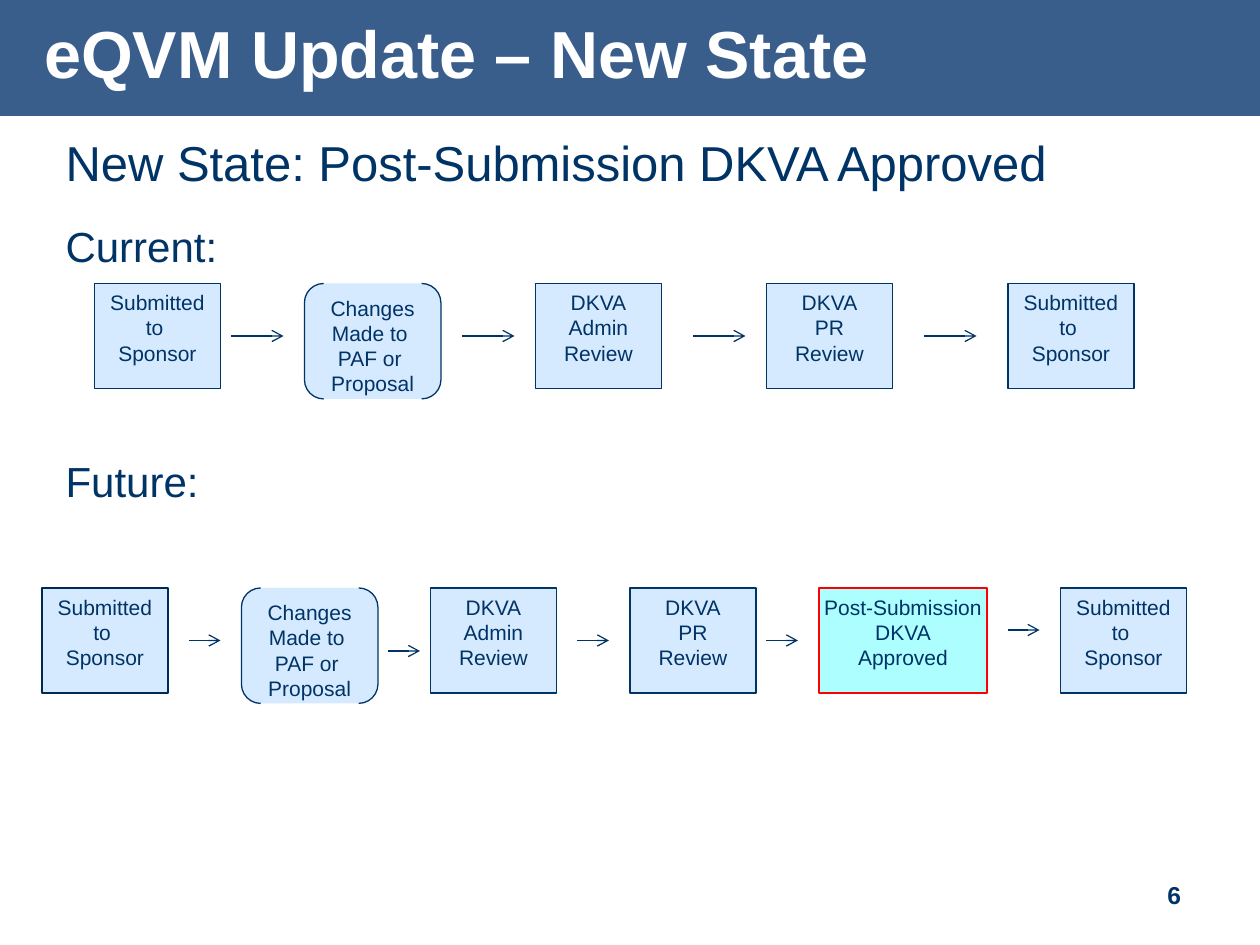
"""Builds the slide comparing the current and future proposal review flows."""
from dataclasses import dataclass

from lxml.etree import SubElement
from pptx import Presentation
from pptx.dml.color import RGBColor
from pptx.enum.shapes import MSO_CONNECTOR, MSO_SHAPE
from pptx.enum.text import MSO_ANCHOR, MSO_AUTO_SIZE, PP_ALIGN
from pptx.oxml.ns import qn
from pptx.util import Inches, Pt

NAVY = RGBColor(0x00, 0x33, 0x66)
DEEP_NAVY = RGBColor(0x00, 0x2A, 0x56)
HEADER_BLUE = RGBColor(0x3A, 0x5E, 0x8C)
PALE_BLUE = RGBColor(0xD5, 0xE9, 0xFF)
CYAN = RGBColor(0xAD, 0xFF, 0xFF)
RED = RGBColor(0xFF, 0x00, 0x00)
WHITE = RGBColor(0xFF, 0xFF, 0xFF)

CELL = Inches(1) // 12
SUBMITTED = "Submitted\nto \nSponsor"
CHANGES = "Changes\nMade to \nPAF or \nProposal"
ADMIN_REVIEW = "DKVA\nAdmin\nReview"
PR_REVIEW = "DKVA\nPR\nReview"
APPROVED = "Post-Submission\nDKVA\nApproved"


@dataclass
class State:
    """A workflow state, placed by grid column and sized in grid cells."""
    text: str
    column: int
    width: int = 12
    height: int = 10
    kind: MSO_SHAPE = MSO_SHAPE.RECTANGLE
    fill: RGBColor = PALE_BLUE
    border: RGBColor = NAVY


@dataclass
class Arrow:
    """A horizontal arrow, placed by grid column and rows below its flow's top."""
    column: int
    drop: int
    length: int


@dataclass
class Flow:
    """A row of states and the arrows between them."""
    row: int
    states: list[State]
    arrows: list[Arrow]


def changes_state(column: int) -> State:
    """Return the bracketed state for changes made to a form."""
    return State(CHANGES, column, 13, 11, MSO_SHAPE.DOUBLE_BRACKET)


FLOWS = [
    Flow(27,
         [State(SUBMITTED, 9), changes_state(29), State(ADMIN_REVIEW, 51),
          State(PR_REVIEW, 73), State(SUBMITTED, 96)],
         [Arrow(column, 5, 5) for column in range(22, 89, 22)]),
    Flow(56,
         [State(SUBMITTED, 4, border=DEEP_NAVY), changes_state(23),
          State(ADMIN_REVIEW, 41), State(PR_REVIEW, 60),
          State(APPROVED, 78, width=16, fill=CYAN, border=RED), State(SUBMITTED, 101)],
         [Arrow(column, drop, 3) for column, drop in
          ((18, 5), (37, 6), (55, 5), (73, 5), (96, 4))]),
]


def set_values(target, values: dict) -> None:
    """Set every attribute named in a dict of format values."""
    for name, value in values.items():
        setattr(target, name, value)


def place(box, left: float, top: float, width: float, height: float) -> None:
    """Move and size a box, in inches."""
    set_values(box, {"left": Inches(left), "top": Inches(top),
                     "width": Inches(width), "height": Inches(height)})


def format_font(para, size: float, color: RGBColor = NAVY, bold: bool = False) -> None:
    """Give all spans of a paragraph the slide's font."""
    for span in para.runs:
        set_values(span.font, {"name": "Arial", "size": Pt(size), "bold": bold})
        span.font.color.rgb = color


def draw_header(page) -> None:
    """Draw the header band behind the formatted title."""
    title = page.shapes.title
    band = page.shapes.add_shape(MSO_SHAPE.RECTANGLE, 0, 0, Inches(10), Inches(0.92))
    band.shadow.inherit = False
    band.fill.solid()
    band.fill.fore_color.rgb = HEADER_BLUE
    band.line.fill.background()
    title.element.addprevious(band.element)
    place(title, 0.25, 0.08, 9.75, 0.75)
    frame = title.text_frame
    frame.text = "eQVM Update – New State"
    set_values(frame, {"vertical_anchor": MSO_ANCHOR.MIDDLE, "auto_size": MSO_AUTO_SIZE.NONE})
    set_values(frame.paragraphs[0], {"alignment": PP_ALIGN.LEFT, "line_spacing": 0.9})
    format_font(frame.paragraphs[0], 38, WHITE, bold=True)


def draw_headings(body) -> None:
    """Fill the body with the flow headings, spaced to leave room for the flows."""
    place(body, 0.42, 1, 9.42, 6.08)
    frame = body.text_frame
    frame.text = "New State: Post-Submission DKVA Approved\nCurrent:\nFuture:"
    set_values(frame, {"vertical_anchor": MSO_ANCHOR.TOP, "auto_size": MSO_AUTO_SIZE.NONE})
    for para, size, gap in zip(frame.paragraphs, (28, 24, 24), (3.5, 16.5, 105.5)):
        para.space_before = Pt(gap)
        format_font(para, size)
        properties = para._p.get_or_add_pPr()
        properties.set("marL", str(Inches(0.38)))
        properties.set("indent", str(Inches(-0.38)))
        SubElement(properties, qn("a:buNone"))


def draw_page_number(page) -> None:
    """Draw the page number at the lower right."""
    box = page.shapes.add_textbox(Inches(9), Inches(6.83), Inches(0.64), Inches(0.44))
    frame = box.text_frame
    frame.text = "6"
    set_values(frame, {"word_wrap": True, "vertical_anchor": MSO_ANCHOR.BOTTOM})
    frame.paragraphs[0].alignment = PP_ALIGN.CENTER
    format_font(frame.paragraphs[0], 14, bold=True)


def draw_state(page, state: State, row: int) -> None:
    """Draw one state of a flow."""
    box = page.shapes.add_shape(state.kind, state.column * CELL, row * CELL,
                                state.width * CELL, state.height * CELL)
    box.shadow.inherit = False
    box.fill.solid()
    box.fill.fore_color.rgb = state.fill
    box.line.color.rgb = state.border
    box.line.width = Pt(0.75)
    frame = box.text_frame
    frame.text = state.text
    set_values(frame, {"word_wrap": False, "vertical_anchor": MSO_ANCHOR.TOP})
    for para in frame.paragraphs:
        para.alignment = PP_ALIGN.CENTER
        format_font(para, 12)


def draw_arrow(page, arrow: Arrow, row: int) -> None:
    """Draw one arrow of a flow."""
    level = (row + arrow.drop) * CELL
    line = page.shapes.add_connector(MSO_CONNECTOR.STRAIGHT, arrow.column * CELL, level,
                                     (arrow.column + arrow.length) * CELL, level)
    line.line.color.rgb = NAVY
    line.line.width = Pt(0.75)
    SubElement(line.line._get_or_add_ln(), qn("a:tailEnd"), type="arrow")
    SubElement(line.element.spPr, qn("a:effectLst"))


def main() -> None:
    """Build and save the deck."""
    deck = Presentation()
    set_values(deck, {"slide_width": Inches(10), "slide_height": Inches(7.5)})
    page = deck.slides.add_slide(deck.slide_layouts[1])
    draw_header(page)
    draw_headings(page.placeholders[1])
    draw_page_number(page)
    for flow in FLOWS:
        for state in flow.states:
            draw_state(page, state, flow.row)
        for arrow in flow.arrows:
            draw_arrow(page, arrow, flow.row)
    deck.save("out.pptx")


if __name__ == "__main__":
    main()
